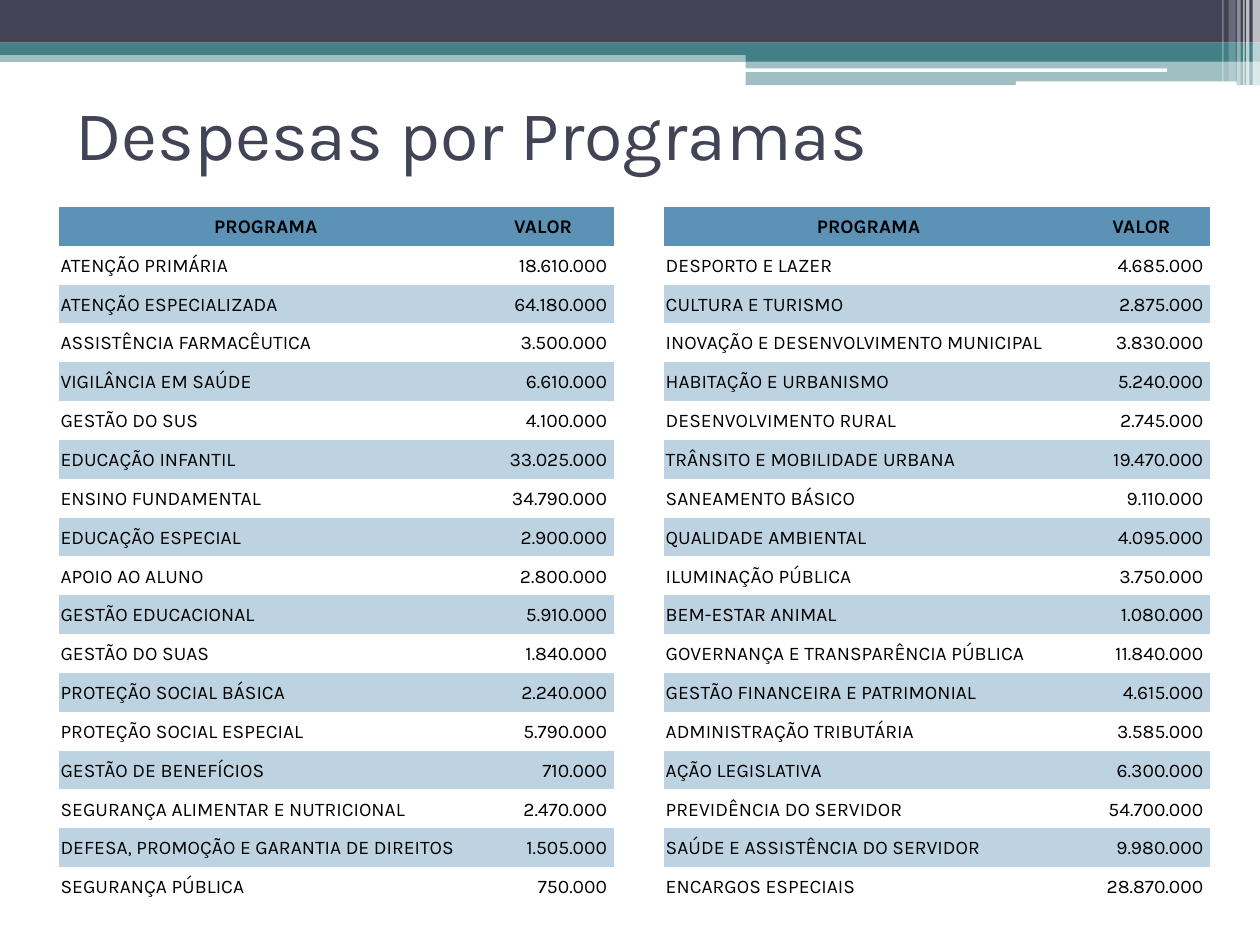
from lxml import etree
from pptx import Presentation
from pptx.dml.color import RGBColor
from pptx.enum.shapes import MSO_SHAPE
from pptx.enum.text import MSO_ANCHOR, PP_ALIGN
from pptx.oxml.ns import qn
from pptx.util import Cm, Pt

RECT, ROUND = MSO_SHAPE.RECTANGLE, MSO_SHAPE.ROUNDED_RECTANGLE
LEFT, MID, RIGHT = PP_ALIGN.LEFT, PP_ALIGN.CENTER, PP_ALIGN.RIGHT
CENTER = MSO_ANCHOR.MIDDLE

FONT = "Karla"
PLAIN = "{2D5ABB26-0587-4C30-8999-92F81FD0307C}"
HUES = {"navy": "424456", "teal": "438086", "white": "FFFFFF",
        "black": "000000", "head": "5C92B5", "band": "BED3E1"}

TITLE = "Despesas por Programas"
HEAD = ("PROGRAMA", "VALOR")
FIRST = [
    ("ATENÇÃO PRIMÁRIA", "18.610.000"),
    ("ATENÇÃO ESPECIALIZADA", "64.180.000"),
    ("ASSISTÊNCIA FARMACÊUTICA", "3.500.000"),
    ("VIGILÂNCIA EM SAÚDE", "6.610.000"),
    ("GESTÃO DO SUS", "4.100.000"),
    ("EDUCAÇÃO INFANTIL", "33.025.000"),
    ("ENSINO FUNDAMENTAL", "34.790.000"),
    ("EDUCAÇÃO ESPECIAL", "2.900.000"),
    ("APOIO AO ALUNO", "2.800.000"),
    ("GESTÃO EDUCACIONAL", "5.910.000"),
    ("GESTÃO DO SUAS", "1.840.000"),
    ("PROTEÇÃO SOCIAL BÁSICA", "2.240.000"),
    ("PROTEÇÃO SOCIAL ESPECIAL", "5.790.000"),
    ("GESTÃO DE BENEFÍCIOS", "710.000"),
    ("SEGURANÇA ALIMENTAR E NUTRICIONAL", "2.470.000"),
    ("DEFESA, PROMOÇÃO E GARANTIA DE DIREITOS", "1.505.000"),
    ("SEGURANÇA PÚBLICA", "750.000"),
]
SECOND = [
    ("DESPORTO E LAZER", "4.685.000"),
    ("CULTURA E TURISMO", "2.875.000"),
    ("INOVAÇÃO E DESENVOLVIMENTO MUNICIPAL", "3.830.000"),
    ("HABITAÇÃO E URBANISMO", "5.240.000"),
    ("DESENVOLVIMENTO RURAL", "2.745.000"),
    ("TRÂNSITO E MOBILIDADE URBANA", "19.470.000"),
    ("SANEAMENTO BÁSICO", "9.110.000"),
    ("QUALIDADE AMBIENTAL", "4.095.000"),
    ("ILUMINAÇÃO PÚBLICA", "3.750.000"),
    ("BEM-ESTAR ANIMAL", "1.080.000"),
    ("GOVERNANÇA E TRANSPARÊNCIA PÚBLICA", "11.840.000"),
    ("GESTÃO FINANCEIRA E PATRIMONIAL", "4.615.000"),
    ("ADMINISTRAÇÃO TRIBUTÁRIA", "3.585.000"),
    ("AÇÃO LEGISLATIVA", "6.300.000"),
    ("PREVIDÊNCIA DO SERVIDOR", "54.700.000"),
    ("SAÚDE E ASSISTÊNCIA DO SERVIDOR", "9.980.000"),
    ("ENCARGOS ESPECIAIS", "28.870.000"),
]

BARS = [
    (RECT, 0, 1.02, 25.4, 0.23, "teal", 50),
    (RECT, 0, 0, 25.4, 0.86, "navy", 100),
    (RECT, 0, 0.86, 25.4, 0.25, "teal", 100),
    (RECT, 15.03, 0.99, 10.37, 0.25, "teal", 100),
    (RECT, 15.03, 1.23, 10.37, 0.49, "teal", 50),
    (ROUND, 15.02, 1.38, 8.51, 0.07, "white", 100),
    (ROUND, 20.48, 1.64, 4.45, 0.1, "white", 100),
    (RECT, 25.25, 0, 0.15, 1.73, "white", 65),
    (RECT, 25.12, 0, 0.07, 1.73, "white", 65),
    (RECT, 25.06, 0, 0.03, 1.73, "white", 60),
    (RECT, 24.94, 0, 0.07, 1.73, "white", 40),
    (RECT, 24.77, 0, 0.14, 1.63, "white", 20),
    (RECT, 24.64, 0, 0.03, 1.63, "white", 30),
]
COLS = [8.34, 2.84, 1.02, 8.24, 2.76]
TALL = 14.1


def paint(fill, hue):
    fill.solid()
    fill.fore_color.rgb = RGBColor.from_string(HUES[hue])


def put(frame, text, size=11, hue="black", bold=False, align=LEFT):
    line = frame.paragraphs[0]
    line.alignment = align
    run = line.add_run()
    run.text = text
    run.font.name = FONT
    run.font.size = Pt(size)
    run.font.bold = bold
    run.font.color.rgb = RGBColor.from_string(HUES[hue])


def add_bars(slide):
    for kind, left, top, wide, high, hue, alpha in BARS:
        bar = slide.shapes.add_shape(kind, Cm(left), Cm(top), Cm(wide), Cm(high))
        bar.shadow.inherit = False
        bar.line.fill.background()
        paint(bar.fill, hue)
        if alpha < 100:
            tint = bar.fill._xPr.find(".//" + qn("a:srgbClr"))
            etree.SubElement(tint, qn("a:alpha"), val=str(alpha * 1000))


def add_title(slide):
    title = slide.shapes.title
    title.left, title.top = Cm(1.27), Cm(1.19)
    title.width, title.height = Cm(22.86), Cm(2.97)
    title.text_frame.vertical_anchor = CENTER
    put(title.text_frame, TITLE, size=40, hue="navy")


def add_grid(slide):
    rows = [(*HEAD, "", *HEAD)]
    rows += [(*a, "", *b) for a, b in zip(FIRST, SECOND)]
    frame = slide.shapes.add_table(len(rows), len(COLS), Cm(1.19), Cm(4.17),
                                   Cm(sum(COLS)), Cm(TALL))
    grid = frame.table
    grid.first_row = grid.horz_banding = False
    grid._tbl.tblPr.find(qn("a:tableStyleId")).text = PLAIN
    for col, wide in zip(grid.columns, COLS):
        col.width = Cm(wide)
    for r, row in enumerate(rows):
        grid.rows[r].height = Cm(TALL / len(rows))
        for c, text in enumerate(row):
            cell = grid.cell(r, c)
            value = c in (1, 4)
            cell.vertical_anchor = CENTER
            cell.margin_left = cell.margin_top = Cm(0.03)
            cell.margin_right = Cm(0.13 if value and r else 0.03)
            cell.margin_bottom = Cm(0)
            if text and r % 2 == 0:
                paint(cell.fill, "band" if r else "head")
            else:
                cell.fill.background()
            align = MID if r == 0 else RIGHT if value else LEFT
            put(cell.text_frame, text, bold=r == 0, align=align)


def main():
    deck = Presentation()
    deck.slide_width, deck.slide_height = Cm(25.4), Cm(19.05)
    slide = deck.slides.add_slide(deck.slide_layouts[5])
    add_bars(slide)
    add_title(slide)
    add_grid(slide)
    deck.save("out.pptx")


if __name__ == "__main__":
    main()
